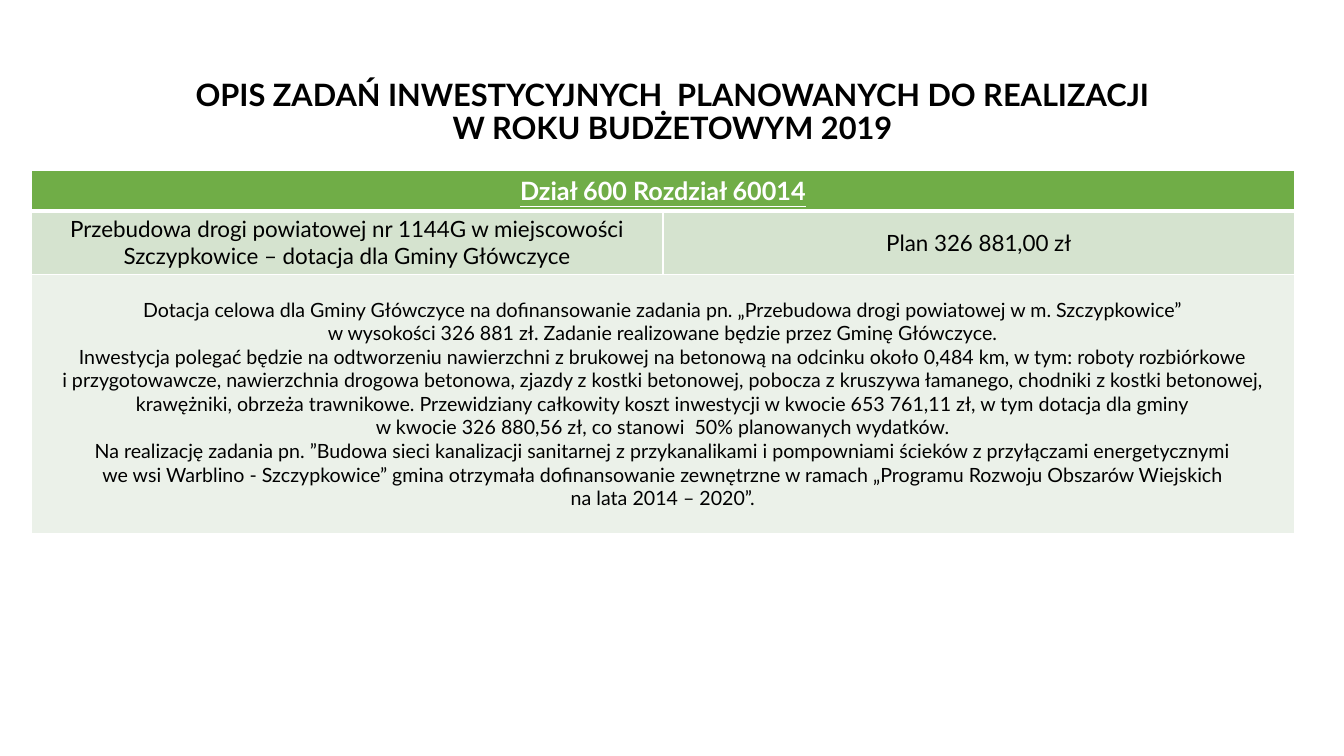
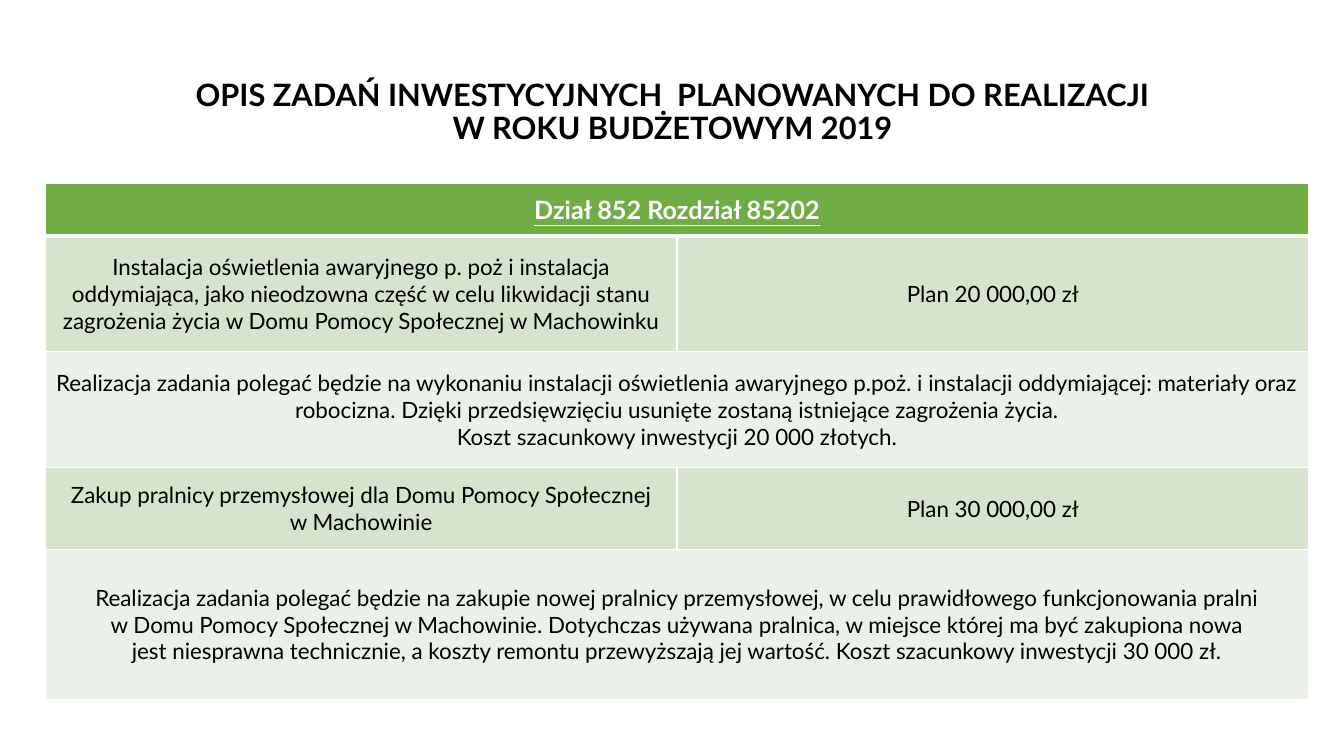
"""Build two slides describing the investment tasks planned for 2019."""
from lxml import etree
from pptx import Presentation
from pptx.dml.color import RGBColor
from pptx.enum import text
from pptx.oxml.ns import qn
from pptx.util import Inches, Pt

FONT = "Lato"
BLACK = RGBColor(0x00, 0x00, 0x00)
WHITE = RGBColor(0xFF, 0xFF, 0xFF)
GREEN = RGBColor(0x70, 0xAD, 0x47)
TASK_FILL = RGBColor(0xD5, 0xE3, 0xCF)
DETAIL_FILL = RGBColor(0xEB, 0xF1, 0xE9)
TITLE = "OPIS ZADAŃ INWESTYCYJNYCH  PLANOWANYCH DO REALIZACJI\vW ROKU BUDŻETOWYM 2019"
COLUMN_WIDTH = 6.265


class Deck:
    def __init__(self):
        self.presentation = Presentation()
        self.presentation.slide_width = Inches(13.33)
        self.presentation.slide_height = Inches(7.5)
        self.slide = None

    def add_slide(self):
        layout = self.presentation.slide_layouts.get_by_name("Title Only")
        self.slide = self.presentation.slides.add_slide(layout)
        title = self.slide.shapes.title
        title.left, title.top = Inches(0.92), Inches(0.4)
        title.width, title.height = Inches(11.5), Inches(1.45)
        frame = title.text_frame
        frame.auto_size = text.MSO_AUTO_SIZE.NONE
        frame.word_wrap = True
        self.fill_text(frame, [TITLE], 22, BLACK, bold=True)
        frame.vertical_anchor = text.MSO_ANCHOR.MIDDLE
        frame.paragraphs[0].line_spacing = 0.9

    def fill_text(self, frame, lines, size, color, bold=False, underline=False):
        frame.text = "\n".join(lines)
        for paragraph in frame.paragraphs:
            paragraph.alignment = text.PP_ALIGN.CENTER
            font = paragraph.font
            font.name, font.size = FONT, Pt(size)
            font.bold, font.underline = bold, underline
            font.color.rgb = color

    def style_cell(self, cell, fill, top=1, bottom=1):
        properties = cell._tc.get_or_add_tcPr()
        for side, width in (("L", 1), ("R", 1), ("T", top), ("B", bottom)):
            line = etree.SubElement(properties, qn(f"a:ln{side}"), w=str(Pt(width)))
            solid = etree.SubElement(line, qn("a:solidFill"))
            etree.SubElement(solid, qn("a:srgbClr"), val=str(WHITE))
        cell.fill.solid()
        cell.fill.fore_color.rgb = fill
        cell.vertical_anchor = text.MSO_ANCHOR.MIDDLE

    def add_table(self, left, top, heights, header, tasks, detail_size):
        """Add a header row, then a task row and a merged detail row for each task."""
        frame = self.slide.shapes.add_table(
            len(heights), 2, Inches(left), Inches(top),
            Inches(2 * COLUMN_WIDTH), Inches(sum(heights)))
        table = frame.table
        for column in table.columns:
            column.width = Inches(COLUMN_WIDTH)
        for index, height in enumerate(heights):
            table.rows[index].height = Inches(height)
            fill = GREEN if index == 0 else TASK_FILL if index % 2 else DETAIL_FILL
            if index % 2 == 0:
                table.cell(index, 0).merge(table.cell(index, 1))
            for cell in table.rows[index].cells:
                self.style_cell(cell, fill, top=3 if index == 1 else 1,
                                bottom=3 if index == 0 else 1)
        self.fill_text(table.cell(0, 0).text_frame, [header], 18, WHITE, True, True)
        for number, (name, plan, details) in enumerate(tasks):
            row = 1 + 2 * number
            self.fill_text(table.cell(row, 0).text_frame, name, 16, BLACK)
            self.fill_text(table.cell(row, 1).text_frame, [plan], 16, BLACK)
            self.fill_text(table.cell(row + 1, 0).text_frame, details, detail_size, BLACK)


ROAD_TASKS = [(
    ["Przebudowa drogi powiatowej nr 1144G w miejscowości Szczypkowice – dotacja dla Gminy Główczyce"],
    "Plan 326 881,00 zł",
    [
        "Dotacja celowa dla Gminy Główczyce na dofinansowanie zadania pn. „Przebudowa drogi powiatowej w m. Szczypkowice”",
        "w wysokości 326 881 zł. Zadanie realizowane będzie przez Gminę Główczyce.",
        "Inwestycja polegać będzie na odtworzeniu nawierzchni z brukowej na betonową na odcinku około 0,484 km, "
        "w tym: roboty rozbiórkowe",
        "i przygotowawcze, nawierzchnia drogowa betonowa, zjazdy z kostki betonowej, pobocza z kruszywa łamanego, "
        "chodniki z kostki betonowej, krawężniki, obrzeża trawnikowe. Przewidziany całkowity koszt inwestycji "
        "w kwocie 653 761,11 zł, w tym dotacja dla gminy",
        "w kwocie 326 880,56 zł, co stanowi  50% planowanych wydatków.",
        "Na realizację zadania pn. ”Budowa sieci kanalizacji sanitarnej z przykanalikami i pompowniami ścieków "
        "z przyłączami energetycznymi",
        "we wsi Warblino - Szczypkowice” gmina otrzymała dofinansowanie zewnętrzne w ramach "
        "„Programu Rozwoju Obszarów Wiejskich",
        "na lata 2014 – 2020”.",
    ],
)]

CARE_HOME_TASKS = [
    (
        ["Instalacja oświetlenia awaryjnego p. poż i instalacja oddymiająca, jako nieodzowna część "
         "w celu likwidacji stanu zagrożenia życia w Domu Pomocy Społecznej w Machowinku"],
        "Plan 20 000,00 zł",
        [
            "Realizacja zadania polegać będzie na wykonaniu instalacji oświetlenia awaryjnego p.poż. "
            "i instalacji oddymiającej: materiały oraz robocizna. Dzięki przedsięwzięciu usunięte zostaną "
            "istniejące zagrożenia życia.",
            "Koszt szacunkowy inwestycji 20 000 złotych.",
        ],
    ),
    (
        ["Zakup pralnicy przemysłowej dla Domu Pomocy Społecznej", "w Machowinie"],
        "Plan 30 000,00 zł",
        [
            "Realizacja zadania polegać będzie na zakupie nowej pralnicy przemysłowej, "
            "w celu prawidłowego funkcjonowania pralni",
            "w Domu Pomocy Społecznej w Machowinie. Dotychczas używana pralnica, "
            "w miejsce której ma być zakupiona nowa",
            "jest niesprawna technicznie, a koszty remontu przewyższają jej wartość. "
            "Koszt szacunkowy inwestycji 30 000 zł.",
        ],
    ),
]


def main():
    deck = Deck()
    deck.add_slide()
    deck.add_table(0.31, 1.69, [0.4, 0.63, 2.57], "Dział 600 Rozdział 60014", ROAD_TASKS, 14)
    deck.add_slide()
    deck.add_table(0.45, 1.82, [0.52, 1.15, 1.15, 0.81, 1.49],
                   "Dział 852 Rozdział 85202", CARE_HOME_TASKS, 16)
    deck.presentation.save("out.pptx")


if __name__ == "__main__":
    main()
